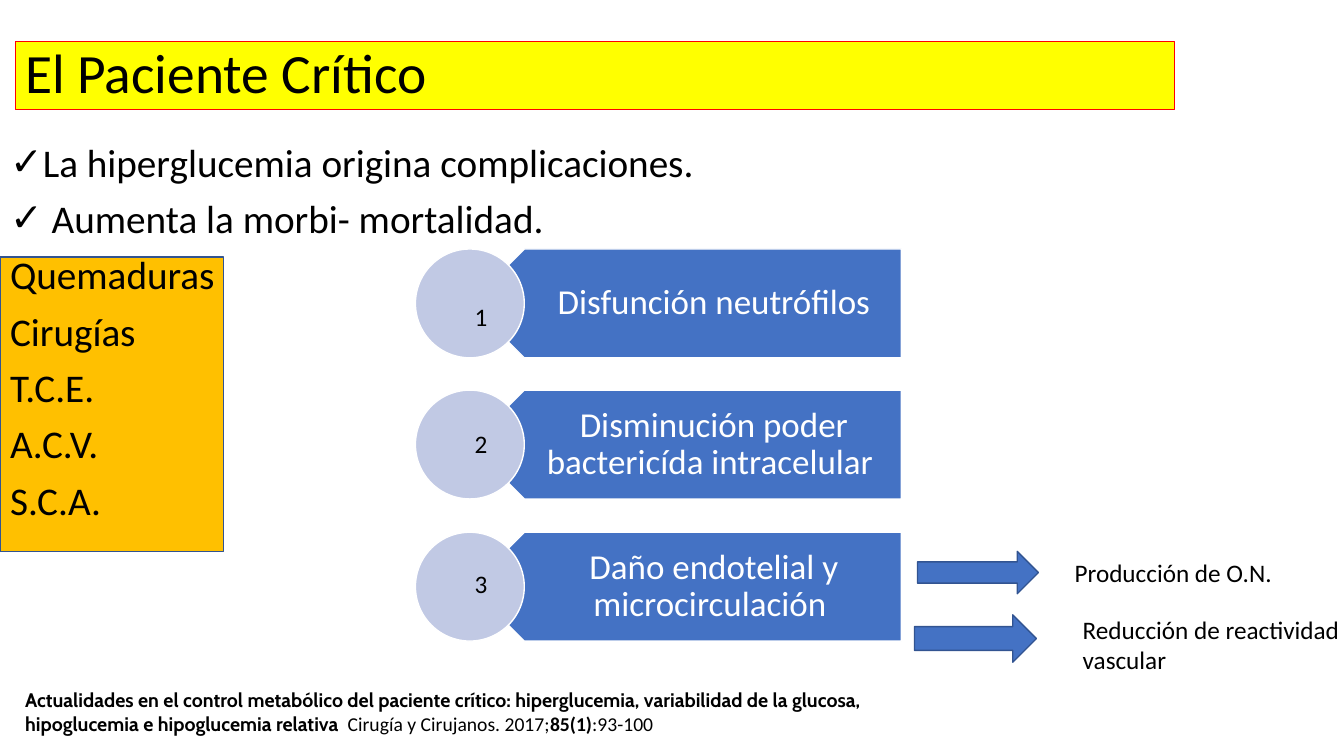
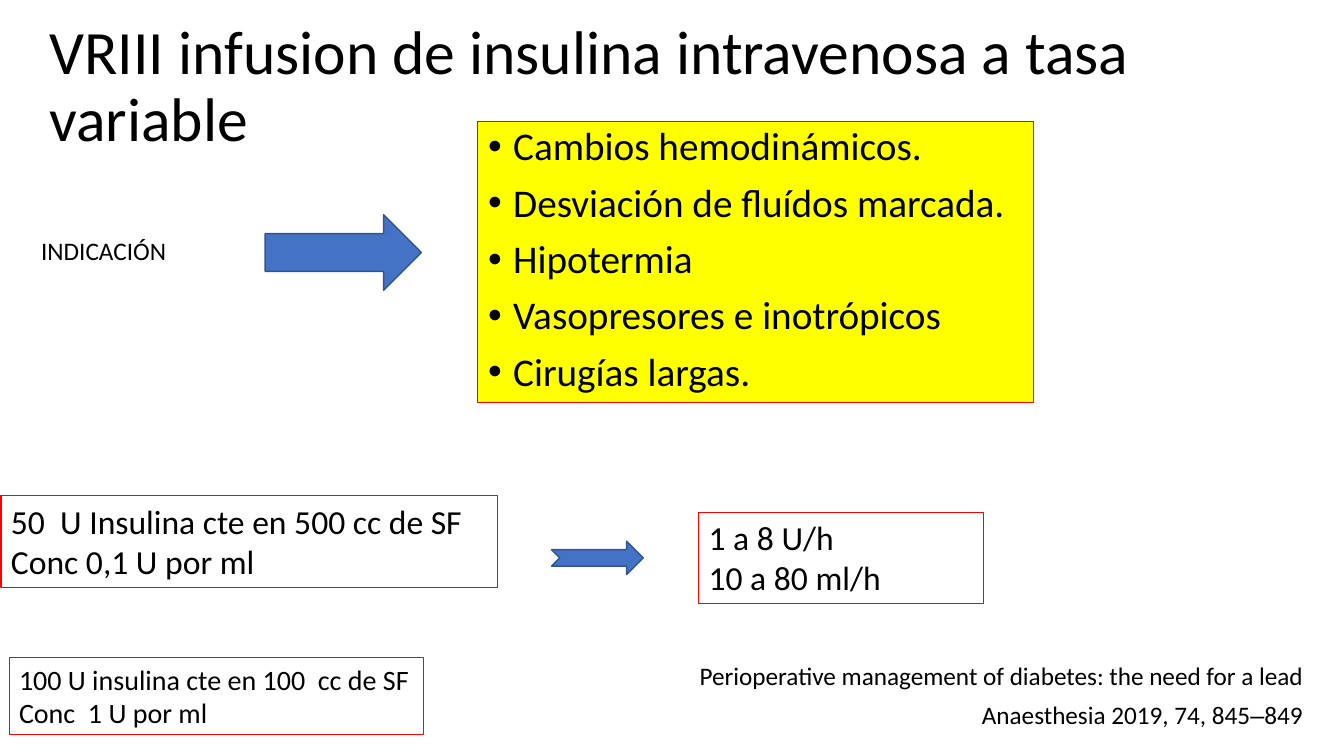
from lxml.etree import SubElement
from pptx import Presentation
from pptx.dml.color import RGBColor
from pptx.enum.shapes import MSO_SHAPE as Kind
from pptx.enum.text import MSO_ANCHOR as Anchor, MSO_AUTO_SIZE as AutoSize, PP_ALIGN as Align
from pptx.oxml.ns import qn
from pptx.util import Pt

PX = 9144
BLACK = RGBColor(0x00, 0x00, 0x00)
WHITE = RGBColor(0xFF, 0xFF, 0xFF)
YELLOW = RGBColor(0xFF, 0xFF, 0x00)
RED = RGBColor(0xFF, 0x00, 0x00)
ORANGE = RGBColor(0xFF, 0xC0, 0x00)
BLUE = RGBColor(0x44, 0x72, 0xC4)
DARK_BLUE = RGBColor(0x32, 0x54, 0x91)
LAVENDER = RGBColor(0xC1, 0xC9, 0xE4)
FONT = "Calibri"
TITLE = dict(anchor=Anchor.MIDDLE, spacing=0.9, fit=AutoSize.NONE)
BODY = dict(size=28, spacing=0.9, before=10, fit=AutoSize.NONE)


def place(shape, at, fill=None, line=None, width=1):
    shape.left, shape.top, shape.width, shape.height = [value * PX for value in at]
    shape.shadow.inherit = False
    if fill is None:
        shape.fill.background()
    else:
        shape.fill.solid()
        shape.fill.fore_color.rgb = fill
    if line is None:
        shape.line.fill.background()
    else:
        shape.line.color.rgb = line
        shape.line.width = Pt(width)
    return shape


def write(shape, lines, size=18, color=BLACK, align=Align.LEFT, anchor=Anchor.TOP, spacing=1.0,
          before=0, bullets="", insets=(10, 5, 10, 5), wrap=True, fit=AutoSize.SHAPE_TO_FIT_TEXT):
    frame = shape.text_frame
    frame.word_wrap = wrap
    frame.auto_size = fit
    frame.vertical_anchor = anchor
    frame.margin_left, frame.margin_top, frame.margin_right, frame.margin_bottom = [
        value * PX for value in insets]
    for index, line in enumerate(lines):
        paragraph = frame.add_paragraph() if index else frame.paragraphs[0]
        paragraph.alignment = align
        paragraph.line_spacing = spacing
        paragraph.space_before = Pt(before)
        bullet = bullets[index:index + 1].strip()
        properties = paragraph._p.get_or_add_pPr()
        properties.set("marL", str(25 * PX if bullet else 0))
        properties.set("indent", str(-25 * PX if bullet else 0))
        if bullet:
            SubElement(properties, qn("a:buChar")).set("char", bullet)
        else:
            SubElement(properties, qn("a:buNone"))
        runs = [(line, FONT, False)] if isinstance(line, str) else line
        for text, font, bold in runs:
            run = paragraph.add_run()
            run.text = text
            run.font.name = font
            run.font.size = Pt(size)
            run.font.bold = bold
            run.font.color.rgb = color


presentation = Presentation()
presentation.slide_width = 1333 * PX
presentation.slide_height = 750 * PX
layout = presentation.slide_layouts[1]

slide = presentation.slides.add_slide(layout)
shapes = slide.shapes
title, body = slide.placeholders
place(title, (15, 41, 1150, 68), YELLOW, RED, 0.75)
write(title, ["El Paciente Crítico"], size=39.6, **TITLE)
place(body, (0, 137, 1150, 476))
write(body, ["La hiperglucemia origina complicaciones.", " Aumenta la morbi- mortalidad.",
             "Quemaduras", "Cirugías", "T.C.E.", "A.C.V.", "S.C.A."], bullets="✓✓", **BODY)
causes_panel = place(shapes.add_shape(Kind.RECTANGLE, 0, 0, 0, 0), (0, 255, 222, 292),
                     ORANGE, DARK_BLUE)
title.element.addprevious(causes_panel.element)

effects = ["Disfunción neutrófilos", "Disminución poder bactericída intracelular ",
           "Daño endotelial y microcirculación "]
number_tops = [294, 420, 559]
for index, (effect, number_top) in enumerate(zip(effects, number_tops)):
    top = 247 + round(140.5 * index)
    banner = place(shapes.add_shape(Kind.PENTAGON, 0, 0, 0, 0), (466, top, 428, 108), BLUE, WHITE)
    banner.rotation = 180
    label = place(shapes.add_textbox(0, 0, 0, 0), (493, top, 401, 108))
    write(label, [effect], size=25, color=WHITE, align=Align.CENTER, anchor=Anchor.MIDDLE,
          spacing=0.9, insets=(48, 10, 19, 10), fit=AutoSize.NONE)
    place(shapes.add_shape(Kind.OVAL, 0, 0, 0, 0), (412, top, 108, 108), LAVENDER, WHITE)
    number = place(shapes.add_textbox(0, 0, 0, 0), (461, number_top, 33, 40))
    write(number, [str(index + 1)], wrap=False)

consequences = [
    ((910, 547, 120, 42), (1056, 548, 218, 40), ["Producción de O.N."]),
    ((907, 610, 121, 47), (1064, 604, 284, 71), ["Reducción de reactividad", "vascular"]),
]
for arrow_at, text_at, lines in consequences:
    place(shapes.add_shape(Kind.RIGHT_ARROW, 0, 0, 0, 0), arrow_at, BLUE, DARK_BLUE)
    write(place(shapes.add_textbox(0, 0, 0, 0), text_at), lines, wrap=False)

citation = place(shapes.add_textbox(0, 0, 0, 0), (15, 678, 914, 81))
write(citation, [[
    ("Actualidades en el control metabólico del paciente crítico: hiperglucemia, variabilidad de la "
     "glucosa, hipoglucemia e hipoglucemia relativa  ", "Cabin", True),
    ("Cirugía y Cirujanos. 2017;", FONT, False),
    ("85(1)", FONT, True),
    (":93-100", FONT, False),
]], size=14)

slide = presentation.slides.add_slide(layout)
shapes = slide.shapes
title, body = slide.placeholders
place(title, (39, 15, 1150, 145))
write(title, ["VRIII infusion de insulina intravenosa a tasa variable"], size=44, **TITLE)
place(body, (474, 121, 551, 278), YELLOW, RED, 0.75)
write(body, ["Cambios hemodinámicos.", "Desviación de fluídos marcada.", "Hipotermia",
             "Vasopresores e inotrópicos", "Cirugías largas."], bullets="•••••", **BODY)

doses = [
    ((1, 492, 492, 91), 24, True, ["50  U Insulina cte en 500 cc de SF", "Conc 0,1 U por ml"]),
    ((693, 508, 283, 91), 24, True, ["1 a 8 U/h", "10 a 80 ml/h"]),
    ((9, 652, 411, 77), 20, False, ["100 U insulina cte en 100  cc de SF", "Conc  1 U por ml"]),
]
for at, size, wrap, lines in doses:
    dose = place(shapes.add_textbox(0, 0, 0, 0), at, line=RED, width=0.75)
    write(dose, lines, size=size, wrap=wrap)

for kind, at in [(Kind.RIGHT_ARROW, (263, 213, 155, 75)),
                 (Kind.NOTCHED_RIGHT_ARROW, (547, 537, 91, 33))]:
    place(shapes.add_shape(kind, 0, 0, 0, 0), at, BLUE, DARK_BLUE)

notes = [
    ((31, 229, 151, 40), "INDICACIÓN"),
    ((684, 650, 640, 40), "Perioperative management of diabetes: the need for a lead"),
    ((964, 689, 346, 40), [("Anaesthesia 2019, 74, 845", FONT, False), ("–", "Arial", False),
                           ("849", FONT, False)]),
]
for at, line in notes:
    write(place(shapes.add_textbox(0, 0, 0, 0), at), [line], wrap=False)

presentation.save("out.pptx")
